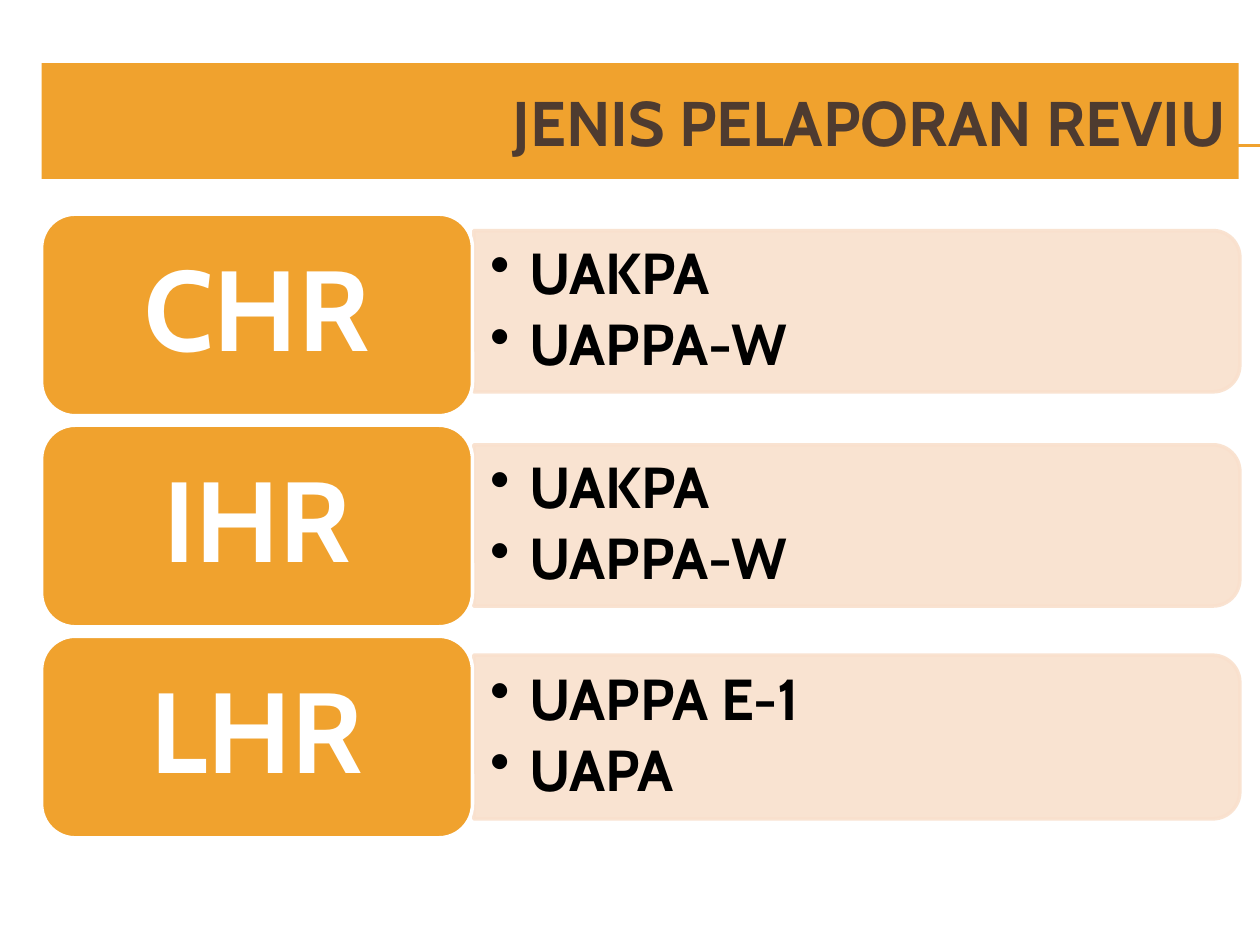
from dataclasses import dataclass

from lxml.etree import SubElement
from pptx import Presentation
from pptx.dml.color import RGBColor
from pptx.enum.shapes import MSO_CONNECTOR, MSO_SHAPE
from pptx.enum.text import MSO_ANCHOR, MSO_AUTO_SIZE, PP_ALIGN
from pptx.oxml.ns import qn
from pptx.util import Inches, Pt

COLORS = {
    "orange": "F0A22E",
    "peach": "F9E0CD",
    "brown": "4E3B30",
    "white": "FFFFFF",
    "black": "000000",
}
FONT = "Cabin"
LEFT = 0.33
LABEL_W, LABEL_H = 3.42, 1.6
LABEL_TOP, ROW_PITCH = 1.7, 1.675
PANEL_LEFT, PANEL_W = 3.76, 6.08
LIST_LEFT, LIST_W = 3.75, 6.02


@dataclass
class ReportType:
    label: str
    units: list[str]
    panel_middle: float
    panel_h: float


REPORT_TYPES = [
    ReportType("CHR", ["UAKPA", "UAPPA-W"], 2.47, 1.28),
    ReportType("IHR", ["UAKPA", "UAPPA-W"], 4.17, 1.28),
    ReportType("LHR", ["UAPPA E-1", "UAPA"], 5.85, 1.3),
]


def rgb(name: str) -> RGBColor:
    return RGBColor.from_string(COLORS[name])


def write(tf, lines: list[str], *, size: float, color: str, align=PP_ALIGN.LEFT,
          line_spacing: float = 0.9, after: float = 0, bullet: bool = False,
          inset: tuple[float, float] = (0.1, 0.05)) -> None:
    """Fill a text frame with one bold paragraph per line."""
    tf.word_wrap = True
    tf.auto_size = MSO_AUTO_SIZE.NONE
    tf.vertical_anchor = MSO_ANCHOR.MIDDLE
    tf.margin_left = tf.margin_right = Inches(inset[0])
    tf.margin_top = tf.margin_bottom = Inches(inset[1])
    for i, line in enumerate(lines):
        p = tf.paragraphs[0] if i == 0 else tf.add_paragraph()
        p.alignment = align
        p.line_spacing = line_spacing
        p.space_after = Pt(after)
        r = p.add_run()
        r.text = line
        r.font.name = FONT
        r.font.size = Pt(size)
        r.font.bold = True
        r.font.color.rgb = rgb(color)
        if bullet:
            pPr = p._p.get_or_add_pPr()
            pPr.set("marL", str(Inches(0.31)))
            pPr.set("indent", str(Inches(-0.31)))
            SubElement(pPr, qn("a:buChar"), char="•")


def add_block(s, kind, left: float, top: float, width: float, height: float,
              fill: str, line: str):
    sp = s.shapes.add_shape(kind, Inches(left), Inches(top), Inches(width), Inches(height))
    sp.shadow.inherit = False
    sp.fill.solid()
    sp.fill.fore_color.rgb = rgb(fill)
    sp.line.color.rgb = rgb(line)
    sp.line.width = Pt(2)
    return sp


def add_rule(s, y: float) -> None:
    """Draw a thin line to the slide's right edge, behind everything else."""
    cxn = s.shapes.add_connector(
        MSO_CONNECTOR.STRAIGHT, Inches(0.56), Inches(y), Inches(10), Inches(y))
    cxn.line.color.rgb = rgb("orange")
    cxn.line.width = Pt(0.75)
    SubElement(cxn._element.spPr, qn("a:effectLst"))
    s.shapes._spTree.insert(2, cxn._element)


def add_title(s, text: str) -> None:
    sp = s.shapes.title
    sp.left, sp.top = Inches(LEFT), Inches(0.5)
    sp.width, sp.height = Inches(9.5), Inches(0.92)
    sp.fill.solid()
    sp.fill.fore_color.rgb = rgb("orange")
    write(sp.text_frame, [text], size=36, color="brown", align=PP_ALIGN.RIGHT,
          line_spacing=1.0)


def add_panel(s, middle: float, height: float) -> None:
    """Draw a panel rounded on its right side, as a top-rounded shape turned by 90 degrees."""
    center = PANEL_LEFT + PANEL_W / 2
    sp = add_block(s, MSO_SHAPE.ROUND_2_SAME_RECTANGLE, center - height / 2,
                   middle - PANEL_W / 2, height, PANEL_W, "peach", "peach")
    sp.rotation = 90
    for clr in sp._element.spPr.iter(qn("a:srgbClr")):
        SubElement(clr, qn("a:alpha"), val="90000")


def add_report_type(s, item: ReportType, top: float) -> None:
    add_panel(s, item.panel_middle, item.panel_h)
    list_h = item.panel_h - 0.13
    tb = s.shapes.add_textbox(Inches(LIST_LEFT), Inches(item.panel_middle - list_h / 2),
                              Inches(LIST_W), Inches(list_h))
    write(tb.text_frame, item.units, size=33, color="black", after=5, bullet=True,
          inset=(0.14, 0.07))
    label = add_block(s, MSO_SHAPE.ROUNDED_RECTANGLE, LEFT, top, LABEL_W, LABEL_H,
                      "orange", "white")
    write(label.text_frame, [item.label], size=65, color="white", align=PP_ALIGN.CENTER,
          inset=(0.27, 0.14))


def main() -> None:
    prs = Presentation()
    prs.slide_width, prs.slide_height = Inches(10), Inches(7.5)
    s = prs.slides.add_slide(prs.slide_layouts[5])
    for y in (1.15, 1.16):
        add_rule(s, y)
    add_title(s, "JENIS PELAPORAN REVIU")
    for i, item in enumerate(REPORT_TYPES):
        add_report_type(s, item, LABEL_TOP + i * ROW_PITCH)
    prs.save("out.pptx")


if __name__ == "__main__":
    main()
